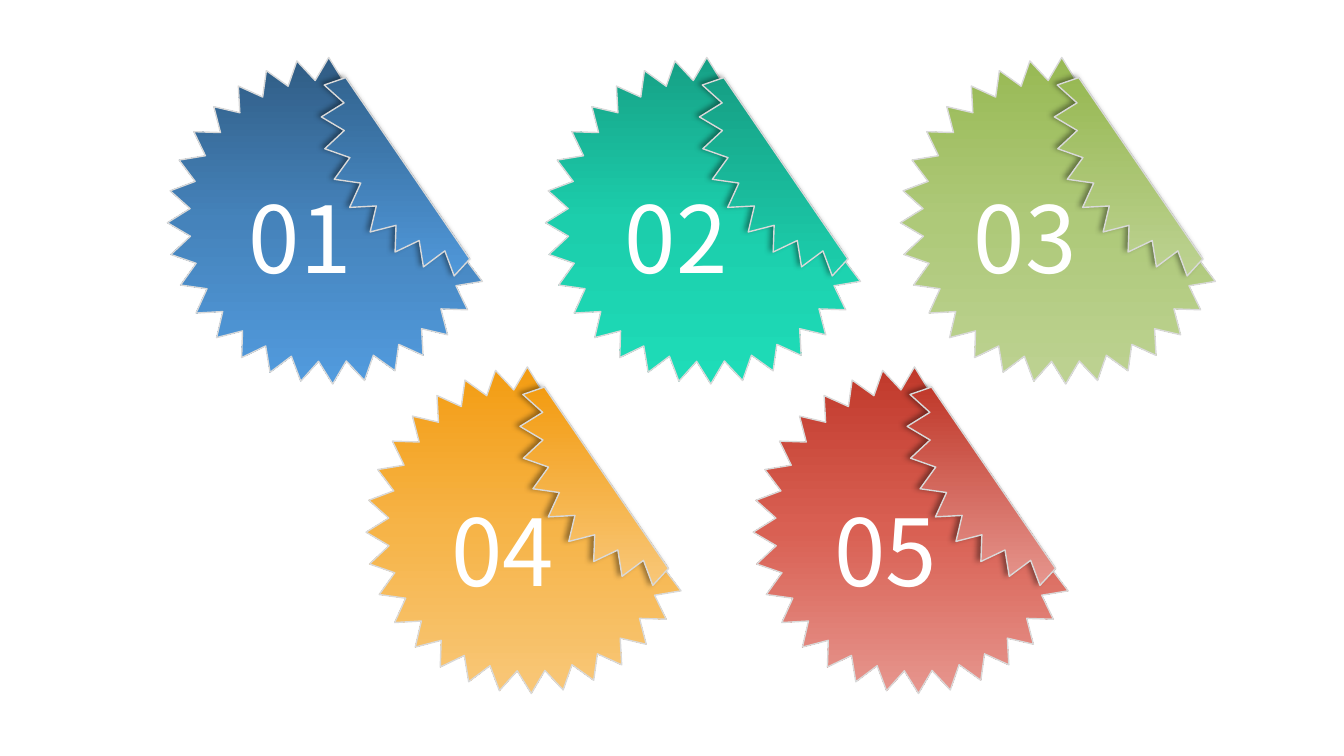
from math import atan2, cos, radians, sin

from lxml import etree
from pptx import Presentation
from pptx.dml.color import RGBColor
from pptx.enum.text import MSO_AUTO_SIZE
from pptx.oxml.ns import qn
from pptx.util import Inches, Pt

FIT_SHAPE = MSO_AUTO_SIZE.SHAPE_TO_FIT_TEXT

COLORS = {"edge": "D9D9D9", "number": "FFFFFF", "shadow": "000000"}

# Number, badge centre, number box position, badge gradient, fold gradient
BADGES = [
    ("01", (3.28, 2.19), (2.37, 1.75), ["305C84", "4583BB", "529BDE"], ["336591", "5098DA"]),
    ("02", (7.03, 2.19), (6.10, 1.75), ["16A085", "1CCEAC", "1EDCB8"], ["16A085", "1CCEAC"]),
    ("03", (10.55, 2.19), (9.56, 1.75), ["98B954", "AEC979", "BDD292"], ["98B954", "BDD292"]),
    ("04", (5.25, 5.26), (4.38, 4.85), ["F39C12", "F6B448", "F8C778"], ["F39C12", "F8C778"]),
    ("05", (9.09, 5.26), (8.18, 4.85), ["C0392B", "D96053", "E6968E"], ["C0392B", "E6968E"]),
]

# The star has 32 teeth; the corner beyond the cut is folded over it.
TEETH = 32
STEP = 180 / TEETH
TIP_RADIUS, NOTCH_RADIUS = 1.62, 1.4
FIRST_NOTCH = 16.18
KEPT_POINTS, FOLDED_POINTS = 47, 17
CUT_TOP, CUT_BOTTOM = (0.15, -1.42), (1.38, 0.38)


def star_point(index):
    """Point relative to the badge centre; even indexes are notches, odd ones tips."""
    radius = TIP_RADIUS if index % 2 else NOTCH_RADIUS
    angle = radians(FIRST_NOTCH + index * STEP)
    return radius * cos(angle), radius * sin(angle)


def mirror_over_cut(point):
    cut_angle = atan2(CUT_BOTTOM[1] - CUT_TOP[1], CUT_BOTTOM[0] - CUT_TOP[0])
    dx, dy = point[0] - CUT_TOP[0], point[1] - CUT_TOP[1]
    c, s = cos(2 * cut_angle), sin(2 * cut_angle)
    return CUT_TOP[0] + c * dx + s * dy, CUT_TOP[1] + s * dx - c * dy


BADGE_OUTLINE = [CUT_TOP, CUT_BOTTOM] + [star_point(i) for i in range(KEPT_POINTS)]
FOLD_OUTLINE = [CUT_TOP, CUT_BOTTOM] + [
    mirror_over_cut(star_point(-1 - i)) for i in range(FOLDED_POINTS)]


class BadgeSlide:
    font = "Noto Sans CJK KR"
    number_size = Pt(66)

    def __init__(self, presentation):
        self.slide = presentation.slides.add_slide(presentation.slide_layouts[6])

    def outline(self, center, points, gradient):
        corners = [(Inches(center[0] + x), Inches(center[1] + y)) for x, y in points]
        builder = self.slide.shapes.build_freeform(*corners[0])
        builder.add_line_segments(corners[1:], close=True)
        piece = builder.convert_to_shape()
        piece.shadow.inherit = False
        piece.line.color.rgb = RGBColor.from_string(COLORS["edge"])
        piece.line.width = Pt(1)
        self.fill_downward(piece, gradient)
        return piece

    def fill_downward(self, piece, gradient):
        """Fill with evenly spaced colours from top to bottom."""
        piece.fill.gradient()
        piece.fill.gradient_angle = 270
        stops = piece._element.spPr.find(".//" + qn("a:gsLst"))
        for stop in list(stops):
            stops.remove(stop)
        for i, color in enumerate(gradient):
            position = 100000 * i // (len(gradient) - 1)
            stop = etree.SubElement(stops, qn("a:gs"), pos=str(position))
            etree.SubElement(stop, qn("a:srgbClr"), val=color)

    def cast_shadow(self, piece):
        effects = piece._element.spPr.find(qn("a:effectLst"))
        shadow = etree.SubElement(
            effects, qn("a:outerShdw"), blurRad=str(Pt(4)), dist=str(Pt(3)),
            dir=str(200 * 60000), algn="ctr", rotWithShape="0")
        color = etree.SubElement(shadow, qn("a:srgbClr"), val=COLORS["shadow"])
        etree.SubElement(color, qn("a:alpha"), val="40000")

    def number(self, text, position):
        box = self.slide.shapes.add_textbox(
            Inches(position[0]), Inches(position[1]), Inches(1.33), Inches(1.21))
        frame = box.text_frame
        frame.word_wrap = True
        frame.auto_size = FIT_SHAPE
        frame.text = text
        font = frame.paragraphs[0].runs[0].font
        font.name = self.font
        font.size = self.number_size
        font.color.rgb = RGBColor.from_string(COLORS["number"])


def main():
    presentation = Presentation()
    presentation.slide_width = Inches(13.33)
    presentation.slide_height = Inches(7.5)
    badges = BadgeSlide(presentation)
    for _, center, _, badge_gradient, fold_gradient in BADGES:
        badges.outline(center, BADGE_OUTLINE, badge_gradient)
        badges.cast_shadow(badges.outline(center, FOLD_OUTLINE, fold_gradient))
    for number, _, position, _, _ in BADGES:
        badges.number(number, position)
    presentation.save("out.pptx")


if __name__ == "__main__":
    main()
